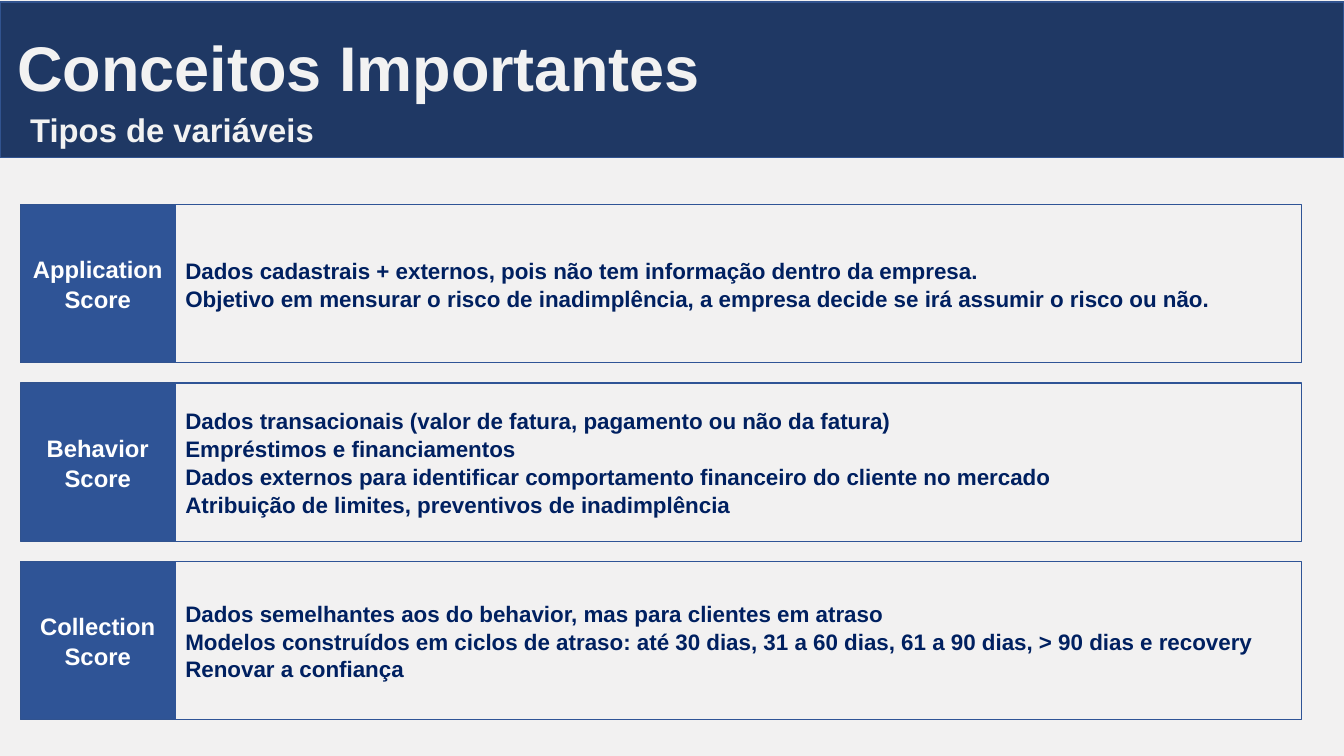
"""Build the slide on the three kinds of credit score variables."""
from dataclasses import dataclass

from pptx import Presentation
from pptx.dml.color import RGBColor as RGB
from pptx.enum.shapes import MSO_SHAPE as SHAPE
from pptx.enum.text import MSO_ANCHOR as ANCHOR, MSO_AUTO_SIZE as AUTOSIZE, PP_ALIGN as ALIGN
from pptx.util import Inches, Pt


@dataclass(frozen=True)
class Theme:
    font: str = "Arial"
    background: str = "F2F1F1"
    band: str = "1F3864"
    band_line: str = "31538F"
    heading: str = "F2F2F2"
    label_fill: str = "2F5496"
    label_text: str = "FFFFFF"
    body_text: str = "002060"
    title_size: float = 45
    subtitle_size: float = 23.4
    label_size: float = 17
    body_size: float = 16
    line_width: float = 0.85
    line_spacing: float = 1.04


class ScoreSlide:
    def __init__(self, prs, theme):
        self.theme = theme
        self.s = prs.slides.add_slide(prs.slide_layouts[0])
        fill = self.s.background.fill
        fill.solid()
        fill.fore_color.rgb = RGB.from_string(theme.background)

    def set_text(self, sp, lines, size, color, align, anchor, spacing=1.0):
        tf = sp.text_frame
        tf.text = "\n".join(lines)
        tf.word_wrap = True
        tf.auto_size = AUTOSIZE.NONE
        tf.vertical_anchor = anchor
        for p in tf.paragraphs:
            p.alignment = align
            p.line_spacing = spacing
            p.space_before = Pt(0)
            for r in p.runs:
                r.font.name = self.theme.font
                r.font.size = Pt(size)
                r.font.bold = True
                r.font.color.rgb = RGB.from_string(color)

    def heading(self, sp, box, text, size):
        sp.left, sp.top, sp.width, sp.height = map(Inches, box)
        self.set_text(sp, [text], size, self.theme.heading, ALIGN.LEFT, ANCHOR.BOTTOM)

    def rect(self, box, line, fill=None):
        sp = self.s.shapes.add_shape(SHAPE.RECTANGLE, *map(Inches, box))
        sp.shadow.inherit = False
        if fill:
            sp.fill.solid()
            sp.fill.fore_color.rgb = RGB.from_string(fill)
        else:
            sp.fill.background()
        sp.line.color.rgb = RGB.from_string(line)
        sp.line.width = Pt(self.theme.line_width)
        return sp

    def header(self, title, subtitle):
        t = self.theme
        band = self.rect((0, 0.02, 13.33, 1.54), t.band_line, t.band)
        title_sp, subtitle_sp = self.s.shapes.title, self.s.placeholders[1]
        title_sp.element.addprevious(band.element)
        self.heading(title_sp, (0.07, 0.26, 9.46, 0.82), title, t.title_size)
        self.heading(subtitle_sp, (0.2, 0.97, 3.37, 0.56), subtitle, t.subtitle_size)

    def score_row(self, top, label, lines):
        t = self.theme
        height = 1.57
        sp = self.rect((0.2, top, 1.54, height), t.band_line, t.label_fill)
        self.set_text(sp, [label, "Score"], t.label_size, t.label_text,
                      ALIGN.CENTER, ANCHOR.MIDDLE, t.line_spacing)
        sp = self.rect((1.74, top, 11.17, height), t.label_fill)
        self.set_text(sp, lines, t.body_size, t.body_text,
                      ALIGN.JUSTIFY, ANCHOR.MIDDLE, t.line_spacing)


SCORES = {
    "Application": [
        "Dados cadastrais + externos, pois não tem informação dentro da empresa.",
        "Objetivo em mensurar o risco de inadimplência, a empresa decide se irá assumir o risco ou não.",
    ],
    "Behavior": [
        "Dados transacionais (valor de fatura, pagamento ou não da fatura)",
        "Empréstimos e financiamentos",
        "Dados externos para identificar comportamento financeiro do cliente no mercado",
        "Atribuição de limites, preventivos de inadimplência",
    ],
    "Collection": [
        "Dados semelhantes aos do behavior, mas para clientes em atraso",
        "Modelos construídos em ciclos de atraso: até 30 dias, 31 a 60 dias, 61 a 90 dias, > 90 dias e recovery",
        "Renovar a confiança",
    ],
}


def main():
    prs = Presentation()
    prs.slide_width, prs.slide_height = Inches(13.33), Inches(7.5)
    slide = ScoreSlide(prs, Theme())
    slide.header("Conceitos Importantes", "Tipos de variáveis")
    first_top, pitch = 2.03, 1.77
    for i, (label, lines) in enumerate(SCORES.items()):
        slide.score_row(first_top + i * pitch, label, lines)
    prs.save("out.pptx")


if __name__ == "__main__":
    main()
